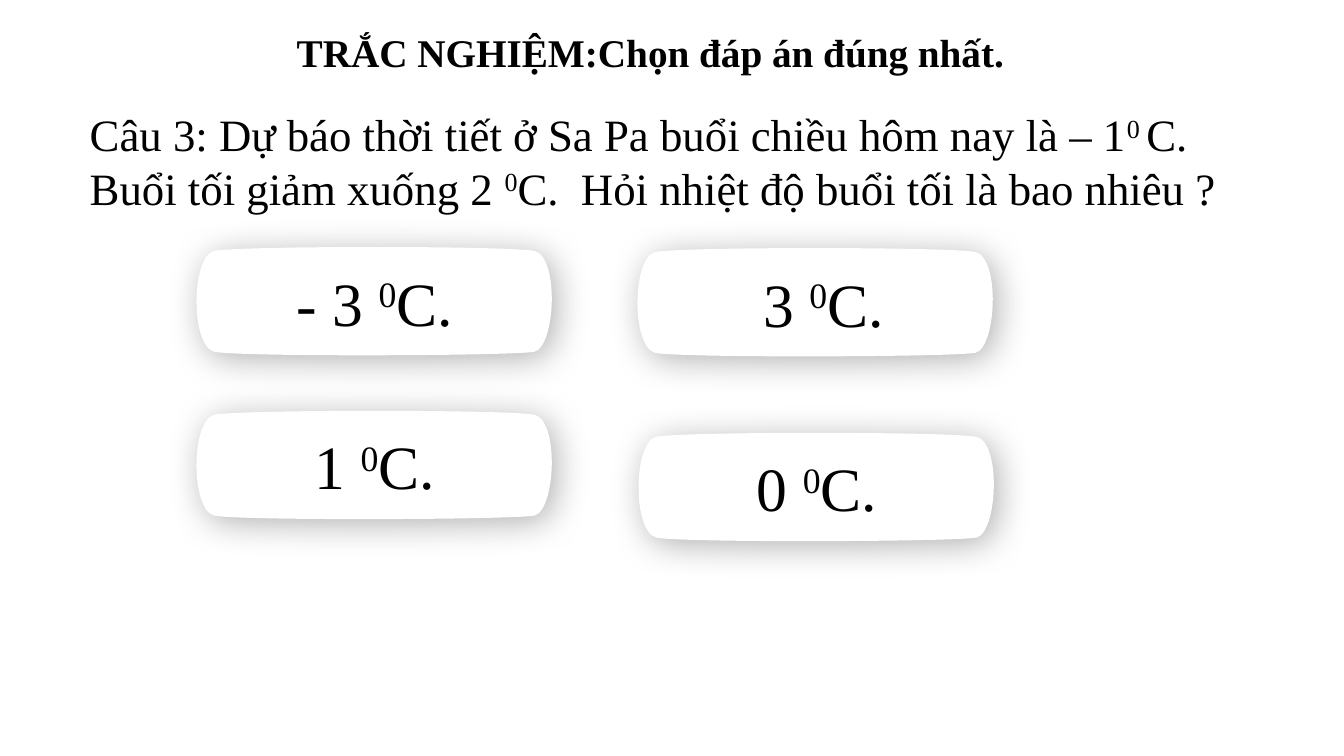
from lxml import etree
from pptx import Presentation
from pptx.dml.color import RGBColor
from pptx.enum.text import MSO_ANCHOR, MSO_AUTO_SIZE, PP_ALIGN
from pptx.oxml import parse_xml
from pptx.oxml.ns import nsdecls, qn
from pptx.util import Pt

PX = 9525  # EMU per px, 96 px to the inch
FONT = "Times New Roman"
BLACK, WHITE = "000000", "FFFFFF"

# Start point of the bulging card outline, then three points per Bézier curve
CARD_OUTLINE = [
    (328, 5),
    (352, 11), (348, 96), (328, 101),
    (308, 105), (46, 106), (23, 101),
    (0, 95), (1, 10), (23, 5),
    (45, 0), (304, 0), (328, 5),
]
ANSWERS = [
    (181, 234, "- 3 "),
    (602, 411, "0 "),
    (601, 235, " 3 "),
    (181, 390, "1 "),
]
QUESTION = [
    "Câu 3: Dự báo thời tiết ở Sa Pa buổi chiều hôm nay là – 1",
    "0 ",
    "C. Buổi tối giảm xuống 2 ",
    "0",
    "C.  Hỏi nhiệt độ buổi tối là bao nhiêu ?",
]


def color(hex_color):
    return RGBColor.from_string(hex_color)


def write(tf, parts, size, align=PP_ALIGN.LEFT, anchor=MSO_ANCHOR.TOP, bold=False):
    """Fill one paragraph with parts, raising every second one to superscript."""
    tf.word_wrap = True
    tf.vertical_anchor = anchor
    p = tf.paragraphs[0]
    p.alignment = align
    for i, part in enumerate(parts):
        r = p.add_run()
        r.text = part
        r.font.name, r.font.size, r.font.bold = FONT, Pt(size), bold
        r.font.color.rgb = color(BLACK)
        if i % 2:
            r._r.get_or_add_rPr().set("baseline", "30000")


def place(sp, x, y, w, h):
    sp.left, sp.top, sp.width, sp.height = (v * PX for v in (x, y, w, h))


def add_title(s, x, y, w, h):
    sp = s.shapes.title
    place(sp, x, y, w, h)
    write(sp.text_frame, ["TRẮC NGHIỆM:Chọn đáp án đúng nhất."], 28, bold=True)
    sp.text_frame.auto_size = MSO_AUTO_SIZE.SHAPE_TO_FIT_TEXT


def add_question(s, x, y, w, h):
    sp = s.shapes.add_textbox(*(v * PX for v in (x, y, w, h)))
    write(sp.text_frame, QUESTION, 32)
    sp.text_frame.auto_size = MSO_AUTO_SIZE.SHAPE_TO_FIT_TEXT


def curve_outline(sp):
    """Turn each three straight segments of a freeform into one Bézier curve."""
    lines = list(sp._element.iter(qn("a:lnTo")))
    for i in range(0, len(lines), 3):
        curve = etree.Element(qn("a:cubicBezTo"))
        lines[i].addprevious(curve)
        for line in lines[i:i + 3]:
            curve.append(line[0])
            line.getparent().remove(line)


def add_soft_shadow(sp):
    sp.shadow.inherit = False
    sp._element.spPr.find(qn("a:effectLst")).append(parse_xml(
        f'<a:outerShdw {nsdecls("a")} blurRad="{Pt(25)}" dist="{Pt(5)}" '
        f'dir="2700000" algn="tl" rotWithShape="0"><a:srgbClr val="{BLACK}">'
        '<a:alpha val="30000"/></a:srgbClr></a:outerShdw>'))


def add_answer(s, x, y, number):
    builder = s.shapes.build_freeform(*CARD_OUTLINE[0], scale=PX)
    builder.add_line_segments(CARD_OUTLINE[1:], close=True)
    sp = builder.convert_to_shape(x * PX, y * PX)
    curve_outline(sp)
    sp.fill.solid()
    sp.fill.fore_color.rgb = color(WHITE)
    sp.line.fill.background()
    add_soft_shadow(sp)
    write(sp.text_frame, [number, "0", "C."], 44, PP_ALIGN.CENTER, MSO_ANCHOR.MIDDLE)


def main():
    prs = Presentation()
    prs.slide_width, prs.slide_height = 1280 * PX, 720 * PX
    s = prs.slides.add_slide(prs.slide_layouts[5])
    add_title(s, 273, 22, 697, 55)
    add_question(s, 76, 97, 1144, 113)
    for x, y, number in ANSWERS:
        add_answer(s, x, y, number)
    prs.save("out.pptx")


if __name__ == "__main__":
    main()
